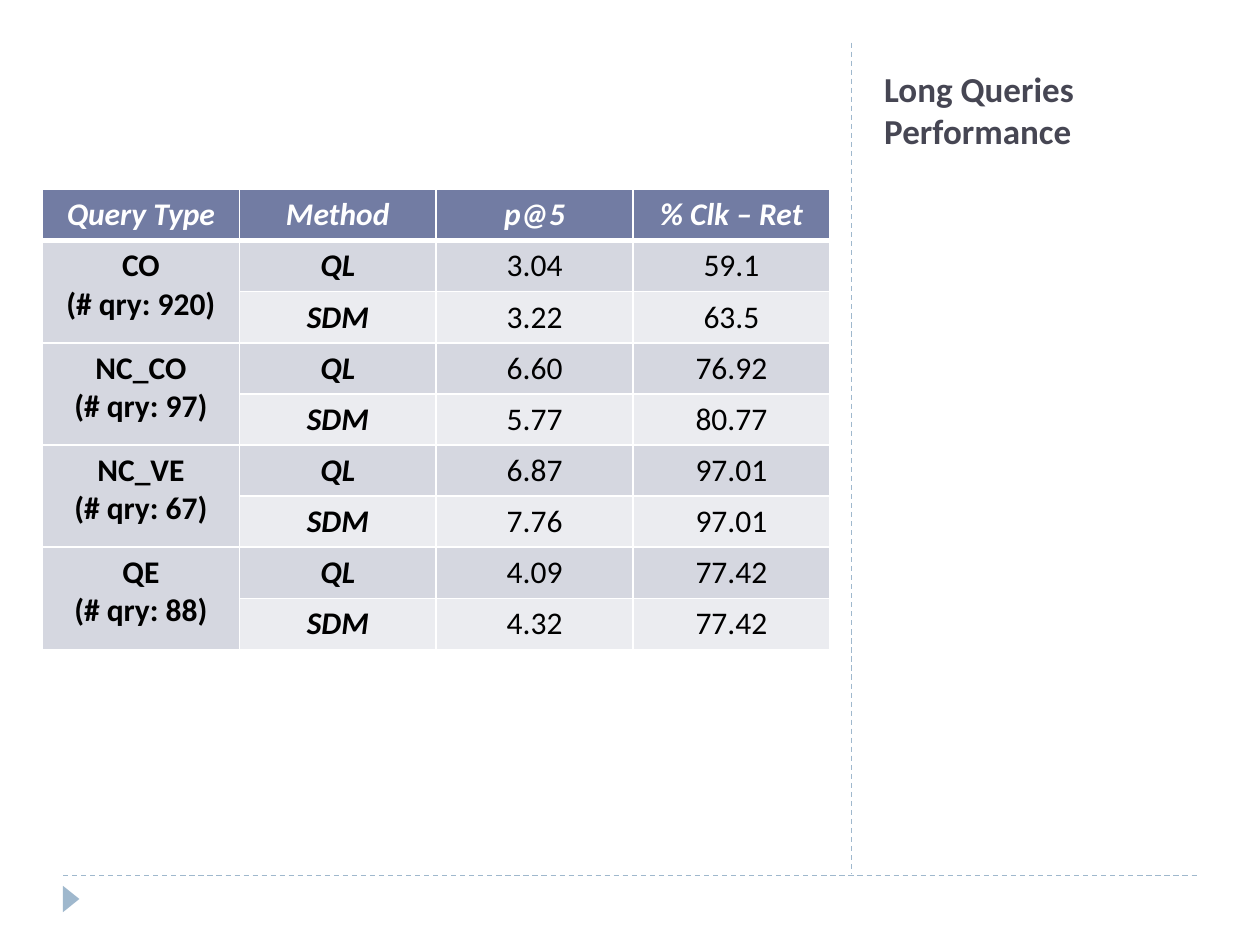
from lxml import etree
from pptx import Presentation
from pptx.dml.color import RGBColor
from pptx.enum.dml import MSO_LINE
from pptx.enum.shapes import MSO_CONNECTOR, MSO_SHAPE
from pptx.enum.text import MSO_ANCHOR, PP_ALIGN
from pptx.oxml.ns import qn
from pptx.util import Pt

STRAIGHT = MSO_CONNECTOR.STRAIGHT
TRIANGLE = MSO_SHAPE.ISOSCELES_TRIANGLE
DASH = MSO_LINE.DASH
BOTTOM = MSO_ANCHOR.BOTTOM
LEFT, CENTER = PP_ALIGN.LEFT, PP_ALIGN.CENTER

TITLE = "Long Queries Performance"
HEADERS = ["Query Type", "Method", "p@5", "% Clk – Ret"]
QUERY_TYPES = [
    ("CO", 920, [("QL", "3.04", "59.1"), ("SDM", "3.22", "63.5")]),
    ("NC_CO", 97, [("QL", "6.60", "76.92"), ("SDM", "5.77", "80.77")]),
    ("NC_VE", 67, [("QL", "6.87", "97.01"), ("SDM", "7.76", "97.01")]),
    ("QE", 88, [("QL", "4.09", "77.42"), ("SDM", "4.32", "77.42")]),
]
METHODS_PER_TYPE = 2

THEME = {
    "font": "Calibri",
    "title_size": 20,
    "table_size": 18,
    "title": "464653",
    "accent": "9FB8CD",
    "header": "727CA3",
    "bands": ("D5D7E0", "EBECF0"),
    "white": "FFFFFF",
    "black": "000000",
}

TABLE_LEFT, TABLE_TOP = 24.3, 108.3
COLUMN_WIDTH, ROW_HEIGHT = 112.5, 29.2
DIVIDERS = [(36, 500.2, 684, 500.2), (486.6, 24.3, 486.6, 499.5)]


def write_text(frame, text, size=THEME["table_size"], color=THEME["black"],
               bold=False, italic=False, align=CENTER):
    """Write one paragraph per line of text in a single format."""
    for index, line in enumerate(text.split("\n")):
        paragraph = frame.add_paragraph() if index else frame.paragraphs[0]
        paragraph.alignment = align
        run = paragraph.add_run()
        run.text = line
        font = run.font
        font.name, font.size = THEME["font"], Pt(size)
        font.bold, font.italic = bold, italic
        font.color.rgb = RGBColor.from_string(color)


def style_cell(cell, fill, bottom_width=1):
    """Give a cell white borders and a solid fill."""
    properties = cell._tc.get_or_add_tcPr()
    for side, width in (("lnL", 1), ("lnR", 1), ("lnT", 1), ("lnB", bottom_width)):
        border = etree.SubElement(properties, qn("a:" + side), w=str(Pt(width)))
        solid = etree.SubElement(border, qn("a:solidFill"))
        etree.SubElement(solid, qn("a:srgbClr"), val=THEME["white"])
    cell.fill.solid()
    cell.fill.fore_color.rgb = RGBColor.from_string(fill)


def add_divider(slide, ends):
    """Add a thin dashed line."""
    line = slide.shapes.add_connector(STRAIGHT, *map(Pt, ends))
    line.line.color.rgb = RGBColor.from_string(THEME["accent"])
    line.line.width = Pt(0.75)
    line.line.dash_style = DASH
    etree.SubElement(line._element.spPr, qn("a:effectLst"))


def add_marker(slide):
    """Add the small triangle that points right in the footer."""
    marker = slide.shapes.add_shape(TRIANGLE, Pt(33.1), Pt(509), Pt(15.1), Pt(9.4))
    marker.rotation = 90
    marker.shadow.inherit = False
    marker.fill.solid()
    marker.fill.fore_color.rgb = RGBColor.from_string(THEME["accent"])
    marker.line.fill.background()


def add_title(slide):
    """Add the title at the top of the side column."""
    box = slide.shapes.add_textbox(Pt(498.2), Pt(23.8), Pt(198), Pt(66.2))
    frame = box.text_frame
    frame.word_wrap = True
    frame.vertical_anchor = BOTTOM
    write_text(frame, TITLE, size=THEME["title_size"], color=THEME["title"],
               bold=True, align=LEFT)


def add_results(slide):
    """Add the results table with one merged label per query type."""
    row_count = 1 + METHODS_PER_TYPE * len(QUERY_TYPES)
    table = slide.shapes.add_table(
        row_count, len(HEADERS), Pt(TABLE_LEFT), Pt(TABLE_TOP),
        Pt(COLUMN_WIDTH * len(HEADERS)), Pt(ROW_HEIGHT * row_count)).table
    for column in table.columns:
        column.width = Pt(COLUMN_WIDTH)
    for row in table.rows:
        row.height = Pt(ROW_HEIGHT)

    for column, header in enumerate(HEADERS):
        cell = table.cell(0, column)
        style_cell(cell, THEME["header"], bottom_width=3)
        write_text(cell.text_frame, header, color=THEME["white"], bold=True, italic=True)

    for group, (name, queries, results) in enumerate(QUERY_TYPES):
        first = 1 + group * METHODS_PER_TYPE
        label = table.cell(first, 0)
        label.merge(table.cell(first + METHODS_PER_TYPE - 1, 0))
        write_text(label.text_frame, f"{name}\n(# qry: {queries})", bold=True)
        for offset, values in enumerate(results):
            style_cell(table.cell(first + offset, 0), THEME["bands"][0])
            for column, value in enumerate(values, start=1):
                cell = table.cell(first + offset, column)
                style_cell(cell, THEME["bands"][offset])
                is_method = column == 1
                write_text(cell.text_frame, value, bold=is_method, italic=is_method)


def main():
    """Build and save the slide."""
    presentation = Presentation()
    presentation.slide_width, presentation.slide_height = Pt(720), Pt(540)
    slide = presentation.slides.add_slide(presentation.slide_layouts[6])
    for ends in DIVIDERS:
        add_divider(slide, ends)
    add_marker(slide)
    add_title(slide)
    add_results(slide)
    presentation.save("out.pptx")


if __name__ == "__main__":
    main()
